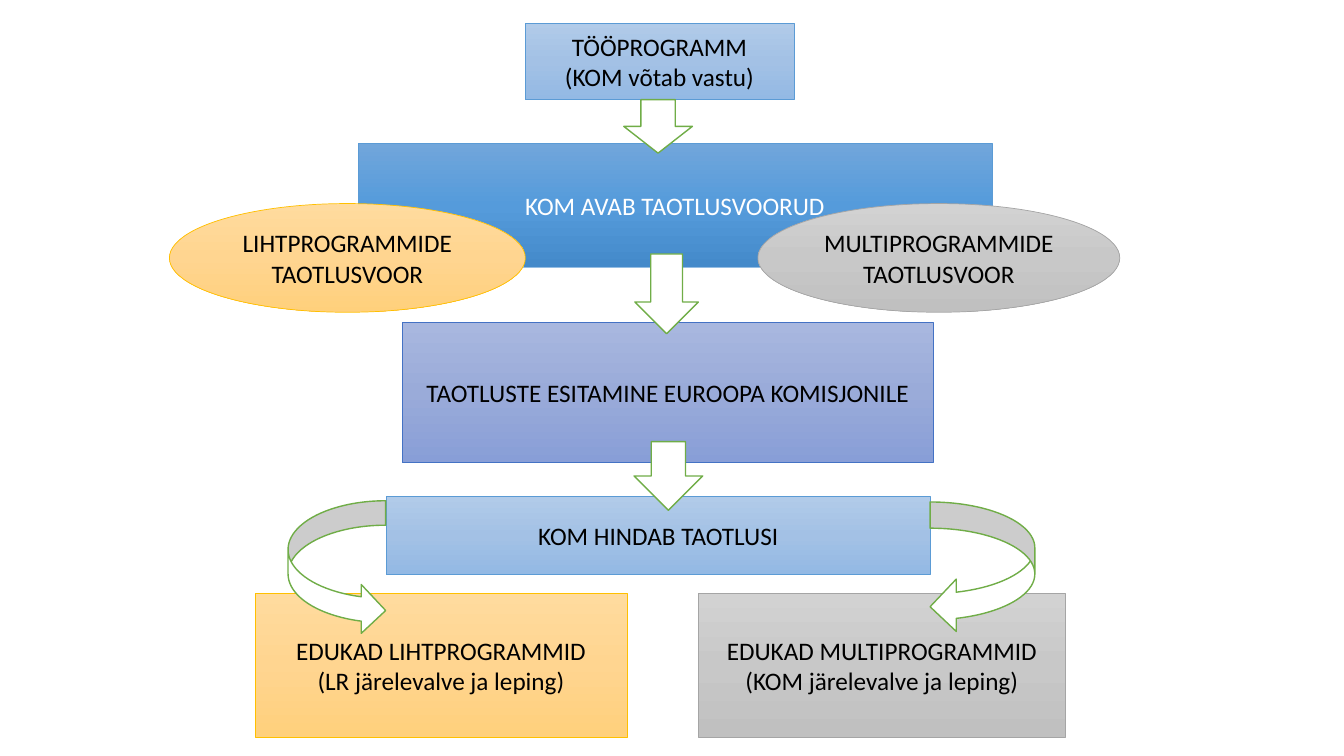
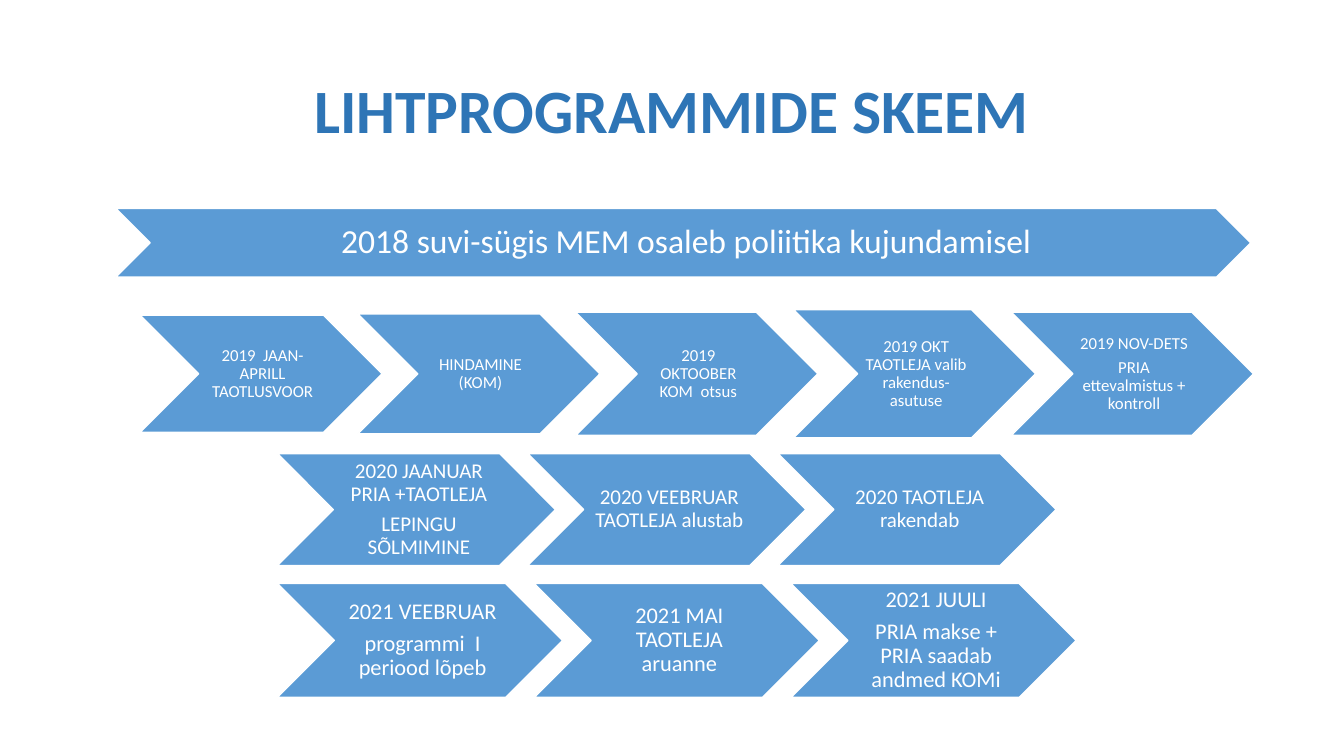
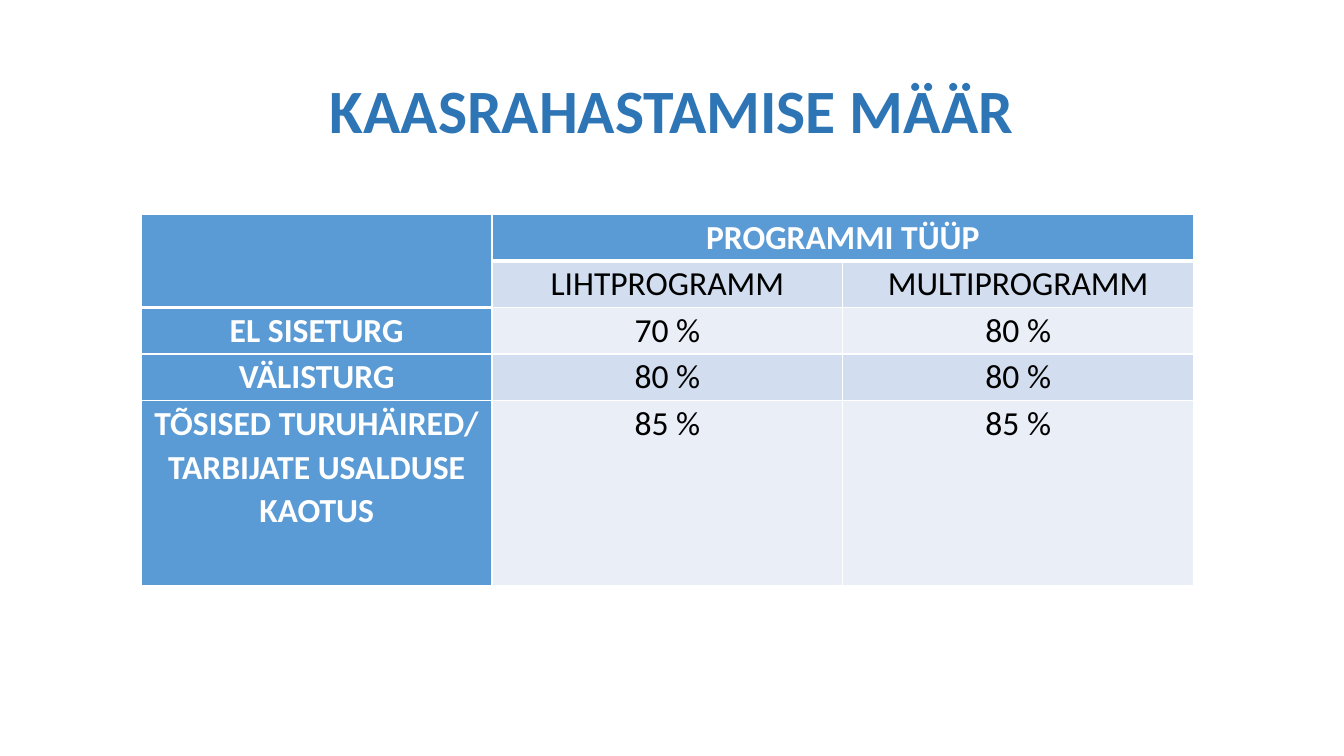
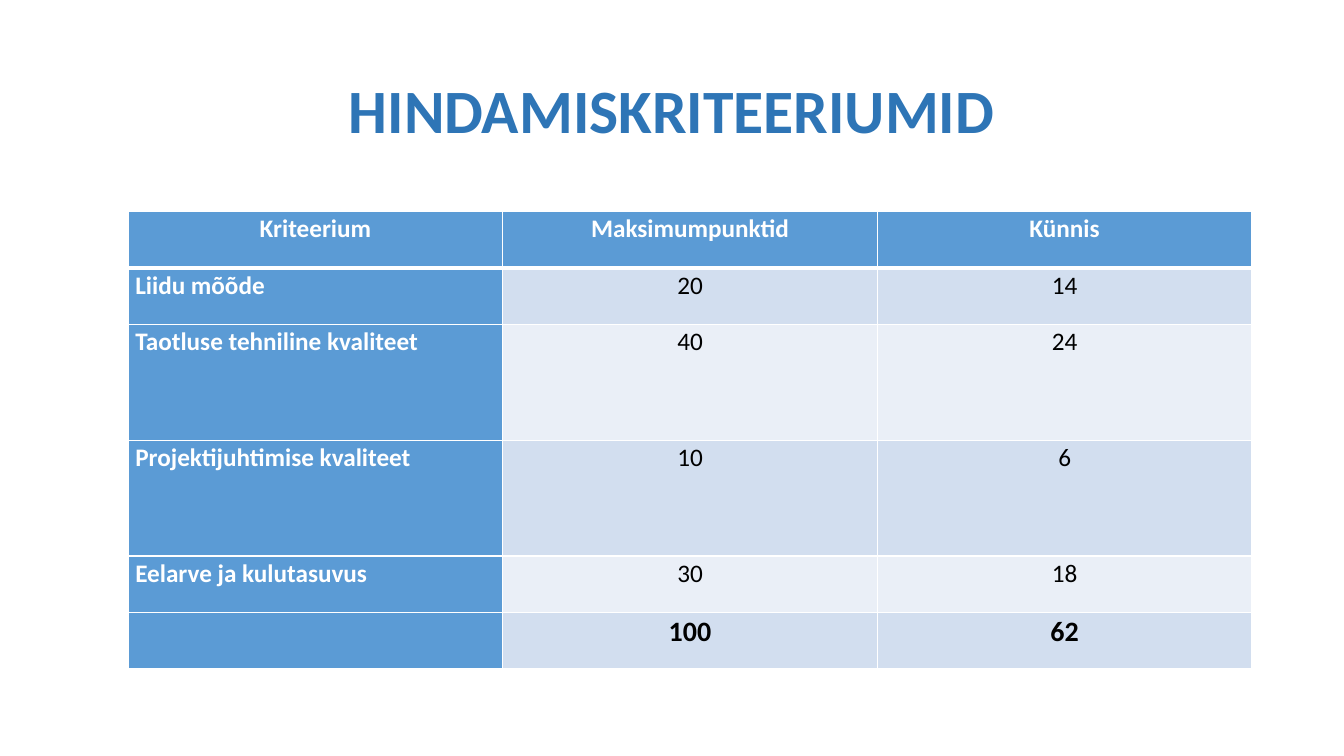
from copy import deepcopy

from lxml import etree
from pptx import Presentation
from pptx.dml.color import RGBColor
from pptx.enum import shapes, text
from pptx.oxml import ns
from pptx.util import Cm, Pt

# Shared look
FONT = "Calibri"
WHITE, BLACK = "FFFFFF", "000000"
TITLE_BLUE, BLUE, GREEN = "2E75B6", "5B9BD5", "70AD47"
BANDS = ("EAEFF7", "D2DEEF")
CENTER, LEFT = text.PP_ALIGN.CENTER, text.PP_ALIGN.LEFT
KIND = shapes.MSO_SHAPE

# Box themes: three gradient stops, outline, text colour
THEMES = {
    "pale": (("B1CBE9", "A3C1E5", "93B9E4"), BLUE, BLACK),
    "strong": (("71A6DB", "559BDB", "448ACA"), BLUE, WHITE),
    "simple": (("FFDB9E", "FFD590", "FFD07C"), "FFC000", BLACK),
    "multi": (("D2D2D2", "C8C8C8", "C0C0C0"), "A5A5A5", BLACK),
    "violet": (("A8B7DF", "9AABD9", "889ED7"), "4472C4", BLACK),
}

# Flow chart, back to front; places are left, top, width, height in cm
STEPS = [
    (KIND.RECTANGLE, "pale", (13.23, 0.58, 6.78, 1.93), "TÖÖPROGRAMM\n(KOM võtab vastu)"),
    (KIND.RECTANGLE, "strong", (9.02, 3.61, 15.98, 3.12), "KOM AVAB TAOTLUSVOORUD"),
    (KIND.OVAL, "simple", (4.27, 5.13, 8.97, 2.74), "LIHTPROGRAMMIDE TAOTLUSVOOR"),
    (KIND.OVAL, "multi", (19.1, 5.13, 9.12, 2.74), "MULTIPROGRAMMIDE TAOTLUSVOOR"),
    (KIND.RECTANGLE, "violet", (10.13, 8.13, 13.39, 3.53),
     "TAOTLUSTE ESITAMINE EUROOPA KOMISJONILE"),
    (KIND.RECTANGLE, "pale", (9.73, 12.52, 13.72, 1.96), "KOM HINDAB TAOTLUSI"),
    (KIND.RECTANGLE, "simple", (6.43, 14.96, 9.37, 3.61),
     "EDUKAD LIHTPROGRAMMID\n(LR järelevalve ja leping)"),
    (KIND.RECTANGLE, "multi", (17.6, 14.96, 9.25, 3.61),
     "EDUKAD MULTIPROGRAMMID\n(KOM järelevalve ja leping)"),
]
ARROWS = [
    (KIND.DOWN_ARROW, (15.72, 2.51, 1.73, 1.35)),
    (KIND.DOWN_ARROW, (16, 6.4, 1.6, 2.01)),
    (KIND.DOWN_ARROW, (15.98, 11.13, 1.73, 1.73)),
    (KIND.CURVED_RIGHT_ARROW, (7.26, 12.62, 2.46, 3.38)),
    (KIND.CURVED_LEFT_ARROW, (23.44, 12.65, 2.64, 3.3)),
]

# Timeline rows: left, middle, chevron width, text size, insets (left, others),
# then (height, wording) for each stage
TIMELINE = [
    (2.92, 6.12, 28.6, 24, (0.25, 0.1),
     [(1.73, "2018 suvi-sügis MEM osaleb poliitika kujundamisel")]),
    (3.53, 9.42, 6.1, 12, (0.13, 0.05),
     [(2.95, "2019  JAAN-APRILL TAOTLUSVOOR"),
      (3.02, "HINDAMINE (KOM)"),
      (3.1, "2019 OKTOOBER KOM  otsus"),
      (3.23, "2019 OKT TAOTLEJA valib rakendus-asutuse"),
      (3.1, "2019 NOV-DETS\nPRIA ettevalmistus + kontroll")]),
    (6.99, 12.84, 7.01, 15, (0.18, 0.05),
     [(2.82, "2020 JAANUAR PRIA +TAOTLEJA\nLEPINGU SÕLMIMINE"),
      (2.82, "2020 VEEBRUAR TAOTLEJA alustab"),
      (2.82, "2020 TAOTLEJA rakendab")]),
    (6.99, 16.14, 7.19, 16, (0.18, 0.05),
     [(2.87, "2021 VEEBRUAR\nprogrammi  I periood lõpeb"),
      (2.87, "2021 MAI TAOTLEJA aruanne"),
      (2.87, "2021 JUULI\nPRIA makse + PRIA saadab andmed KOMi")]),
]
CHEVRON_PITCH = 0.9  # share of a chevron's width

# Tables; heads is the number of heading rows in each column
FUNDING = dict(
    place=(3.56, 5.41), column=8.84, heights=[1.17] * 4 + [4.67],
    heads=(2, 1, 1), size=24, label_align=CENTER,
    rows=[("", "PROGRAMMI TÜÜP", ""),
          ("", "LIHTPROGRAMM", "MULTIPROGRAMM"),
          ("EL SISETURG", "70 %", "80 %"),
          ("VÄLISTURG", "80 %", "80 %"),
          ("TÕSISED TURUHÄIRED/\nTARBIJATE USALDUSE KAOTUS", "85 %", "85 %")])
CRITERIA = dict(
    place=(3.23, 5.33), column=9.44, heights=[1.42, 1.42, 2.92, 2.92, 1.42, 1.42],
    heads=(1, 1, 1), size=18, label_align=LEFT, total_size=20,
    rows=[("Kriteerium", "Maksimumpunktid", "Künnis"),
          ("Liidu mõõde", "20", "14"),
          ("Taotluse tehniline kvaliteet", "40", "24"),
          ("Projektijuhtimise kvaliteet", "10", "6"),
          ("Eelarve ja kulutasuvus", "30", "18"),
          ("", "100", "62")])


def rgb(code):
    return RGBColor.from_string(code)


def write(frame, wording, size, color, bold=False, align=CENTER, spacing=None, after=None):
    frame.text = wording
    for paragraph in frame.paragraphs:
        paragraph.alignment = align
        paragraph.line_spacing = spacing
        paragraph.space_after = after
        font = paragraph.font
        font.name, font.size, font.bold = FONT, Pt(size), bold
        font.color.rgb = rgb(color)


def add_figure(slide, kind, place, line, width, fill=None):
    figure = slide.shapes.add_shape(kind, *map(Cm, place))
    figure.shadow.inherit = False
    figure.line.color.rgb = rgb(line)
    figure.line.width = Pt(width)
    if fill:
        figure.fill.solid()
        figure.fill.fore_color.rgb = rgb(fill)
    return figure


def shade(figure, colors):
    """Three-stop gradient from top to bottom."""
    figure.fill.gradient()
    figure.fill.gradient_angle = 270
    first = figure._element.spPr.find(".//" + ns.qn("a:gs"))
    middle = deepcopy(first)
    middle.set("pos", "50000")
    first.addnext(middle)
    for stop, color in zip(figure.fill.gradient_stops, colors):
        stop.color.rgb = rgb(color)


def add_title(slide, wording):
    frame = slide.shapes.add_textbox(Cm(2.33), Cm(1.01), Cm(29.21), Cm(3.68)).text_frame
    frame.word_wrap = True
    frame.vertical_anchor = text.MSO_ANCHOR.MIDDLE
    write(frame, wording, 44, TITLE_BLUE, bold=True, spacing=0.9)


def set_borders(cell, top, bottom):
    props = cell._tc.get_or_add_tcPr()
    sides = (("a:lnL", 1), ("a:lnR", 1), ("a:lnT", top), ("a:lnB", bottom))
    for index, (tag, width) in enumerate(sides):
        edge = etree.Element(ns.qn(tag), w=str(Pt(width)))
        fill = etree.SubElement(edge, ns.qn("a:solidFill"))
        etree.SubElement(fill, ns.qn("a:srgbClr"), val=WHITE)
        props.insert(index, edge)


def add_grid(slide, place, column, heights, heads, size, label_align, rows, total_size=None):
    left, top = place
    grid = slide.shapes.add_table(len(rows), len(heads), Cm(left), Cm(top),
                                  Cm(column * len(heads)), Cm(sum(heights))).table
    grid.first_row = grid.horz_banding = False
    for col in grid.columns:
        col.width = Cm(column)
    for r, (height, row) in enumerate(zip(heights, rows)):
        grid.rows[r].height = Cm(height)
        is_total = total_size is not None and r == len(rows) - 1
        for c, wording in enumerate(row):
            cell = grid.cell(r, c)
            is_head = r < heads[c]
            is_label = is_head or c == 0
            cell.margin_left = cell.margin_right = Cm(0.18)
            cell.margin_top = cell.margin_bottom = 0
            cell.fill.solid()
            cell.fill.fore_color.rgb = rgb(BLUE if is_label else BANDS[r % 2])
            set_borders(cell, top=3 if r == heads[c] else 1, bottom=3 if is_head else 1)
            write(cell.text_frame, wording, total_size if is_total else size,
                  WHITE if is_label else BLACK, bold=is_label or is_total,
                  align=label_align if c == 0 and not is_head else CENTER, spacing=1.07)
    return grid


def build_flow(slide):
    for kind, theme, place, wording in STEPS:
        stops, line, color = THEMES[theme]
        step = add_figure(slide, kind, place, line, 0.5)
        shade(step, stops)
        write(step.text_frame, wording, 18, color)
    for kind, place in ARROWS:
        add_figure(slide, kind, place, GREEN, 1, WHITE)


def build_timeline(slide):
    add_title(slide, "LIHTPROGRAMMIDE SKEEM")
    for left, middle, width, size, (inset_left, inset), stages in TIMELINE:
        for i, (height, wording) in enumerate(stages):
            place = (left + i * width * CHEVRON_PITCH, middle - height / 2, width, height)
            frame = add_figure(slide, KIND.CHEVRON, place, WHITE, 1, BLUE).text_frame
            frame.margin_left = Cm(inset_left)
            frame.margin_right = frame.margin_top = frame.margin_bottom = Cm(inset)
            write(frame, wording, size, WHITE, spacing=0.9, after=Pt(0.35 * size))


def build_funding(slide):
    add_title(slide, "KAASRAHASTAMISE MÄÄR")
    grid = add_grid(slide, **FUNDING)
    grid.cell(0, 0).merge(grid.cell(1, 0))
    grid.cell(0, 1).merge(grid.cell(0, 2))


def build_criteria(slide):
    add_title(slide, "HINDAMISKRITEERIUMID")
    add_grid(slide, **CRITERIA)


def main():
    deck = Presentation()
    deck.slide_width, deck.slide_height = Cm(33.87), Cm(19.05)
    for build in (build_flow, build_timeline, build_funding, build_criteria):
        build(deck.slides.add_slide(deck.slide_layouts[6]))
    deck.save("out.pptx")


if __name__ == "__main__":
    main()
